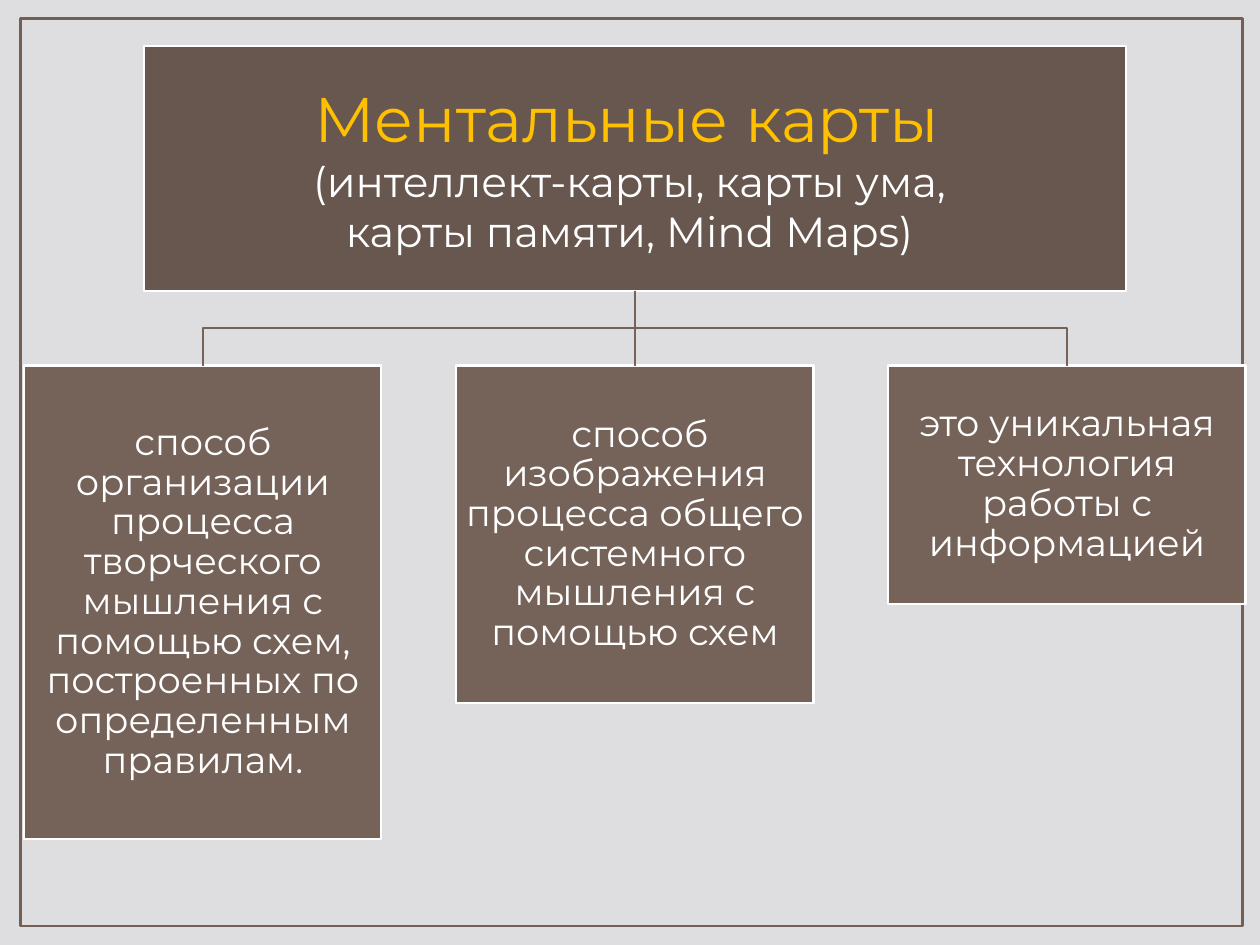
from lxml import etree
from pptx import Presentation
from pptx.dml.color import RGBColor
from pptx.enum import shapes, text
from pptx.oxml import ns
from pptx.util import Cm, Pt

BACKGROUND = RGBColor(0xDE, 0xDE, 0xE0)
FRAME = RGBColor(0x72, 0x60, 0x56)
HEADER = RGBColor(0x67, 0x57, 0x4E)
BROWN = RGBColor(0x75, 0x63, 0x5A)
GOLD = RGBColor(0xFF, 0xC0, 0x00)
WHITE = RGBColor(0xFF, 0xFF, 0xFF)
FONT = "Montserrat"

CENTER = 12.8
HEADER_TOP, HEADER_WIDTH, HEADER_HEIGHT = 0.92, 19.8, 4.94
HEADER_BOTTOM = HEADER_TOP + HEADER_HEIGHT
BRANCH_TOP, BRANCH_WIDTH, BRANCH_PITCH = 7.37, 7.2, 8.71
FORK = (HEADER_BOTTOM + BRANCH_TOP) / 2

HEADING = [
    ("Ментальные карты ", 36, GOLD),
    ("(интеллект-карты, карты ума, ", 24, WHITE),
    ("карты памяти, Mind Maps) ", 24, WHITE),
]
BRANCHES = [
    ("способ организации процесса творческого мышления с помощью схем, "
     "построенных по определенным правилам.", 9.55),
    (" способ изображения процесса общего системного мышления "
     "с помощью схем", 6.81),
    ("это уникальная технология работы с информацией", 4.8),
]


def write(paragraph, words, *, size, color, spacing=1.0):
    paragraph.alignment = text.PP_ALIGN.CENTER
    paragraph.line_spacing = spacing
    run = paragraph.add_run()
    run.text = words
    run.font.name = FONT
    run.font.size = Pt(size)
    run.font.color.rgb = color


def style_box(box, fill, margin):
    box.fill.solid()
    box.fill.fore_color.rgb = fill
    box.line.color.rgb = WHITE
    box.line.width = Pt(1.25)
    frame = box.text_frame
    frame.word_wrap = True
    frame.auto_size = text.MSO_AUTO_SIZE.NONE
    frame.vertical_anchor = text.MSO_ANCHOR.MIDDLE
    frame.margin_left = frame.margin_right = Cm(margin)
    frame.margin_top = frame.margin_bottom = Cm(margin)


def add_rectangle(slide, left, top, width, height):
    rectangle = slide.shapes.add_shape(
        shapes.MSO_SHAPE.RECTANGLE, Cm(left), Cm(top), Cm(width), Cm(height))
    rectangle.shadow.inherit = False
    return rectangle


def add_frame(slide):
    frame = add_rectangle(slide, 0.41, 0.38, 24.64, 18.29)
    frame.fill.background()
    frame.line.color.rgb = FRAME
    frame.line.width = Pt(1.5)


def add_header(slide):
    header = slide.shapes.title
    header.left, header.top = Cm(CENTER - HEADER_WIDTH / 2), Cm(HEADER_TOP)
    header.width, header.height = Cm(HEADER_WIDTH), Cm(HEADER_HEIGHT)
    style_box(header, HEADER, 0.08)
    for index, (words, size, color) in enumerate(HEADING):
        body = header.text_frame
        paragraph = body.add_paragraph() if index else body.paragraphs[0]
        write(paragraph, words, size=size, color=color)
    return header


def add_branch(slide, words, center, height):
    branch = add_rectangle(
        slide, center - BRANCH_WIDTH / 2, BRANCH_TOP, BRANCH_WIDTH, height)
    style_box(branch, BROWN, 0.03)
    write(branch.text_frame.paragraphs[0], words,
          size=21, color=WHITE, spacing=0.9)
    return branch


def style_link(link):
    link.line.color.rgb = BROWN
    link.line.width = Pt(1.25)


def add_elbow(slide, center):
    """Lead from the header down to the fork, across, and down to a branch."""
    builder = slide.shapes.build_freeform(Cm(CENTER), Cm(HEADER_BOTTOM))
    corners = [(CENTER, FORK), (center, FORK), (center, BRANCH_TOP)]
    builder.add_line_segments([(Cm(x), Cm(y)) for x, y in corners], close=False)
    elbow = builder.convert_to_shape()
    elbow.fill.background()
    elbow.shadow.inherit = False
    style_link(elbow)


def add_stem(slide, header, branch):
    stem = slide.shapes.add_connector(
        shapes.MSO_CONNECTOR.STRAIGHT,
        Cm(CENTER), Cm(HEADER_BOTTOM), Cm(CENTER), Cm(BRANCH_TOP))
    stem.begin_connect(header, 2)
    stem.end_connect(branch, 0)
    style_link(stem)
    etree.SubElement(stem._element.spPr, ns.qn("a:effectLst"))


def main():
    deck = Presentation()
    deck.slide_width, deck.slide_height = Cm(25.4), Cm(19.05)
    slide = deck.slides.add_slide(deck.slide_layouts[5])
    slide.background.fill.solid()
    slide.background.fill.fore_color.rgb = BACKGROUND

    add_frame(slide)
    header = add_header(slide)
    for position, (words, height) in enumerate(BRANCHES, start=-1):
        center = CENTER + position * BRANCH_PITCH
        branch = add_branch(slide, words, center, height)
        if position:
            add_elbow(slide, center)
        else:
            add_stem(slide, header, branch)
    deck.save("out.pptx")


if __name__ == "__main__":
    main()
